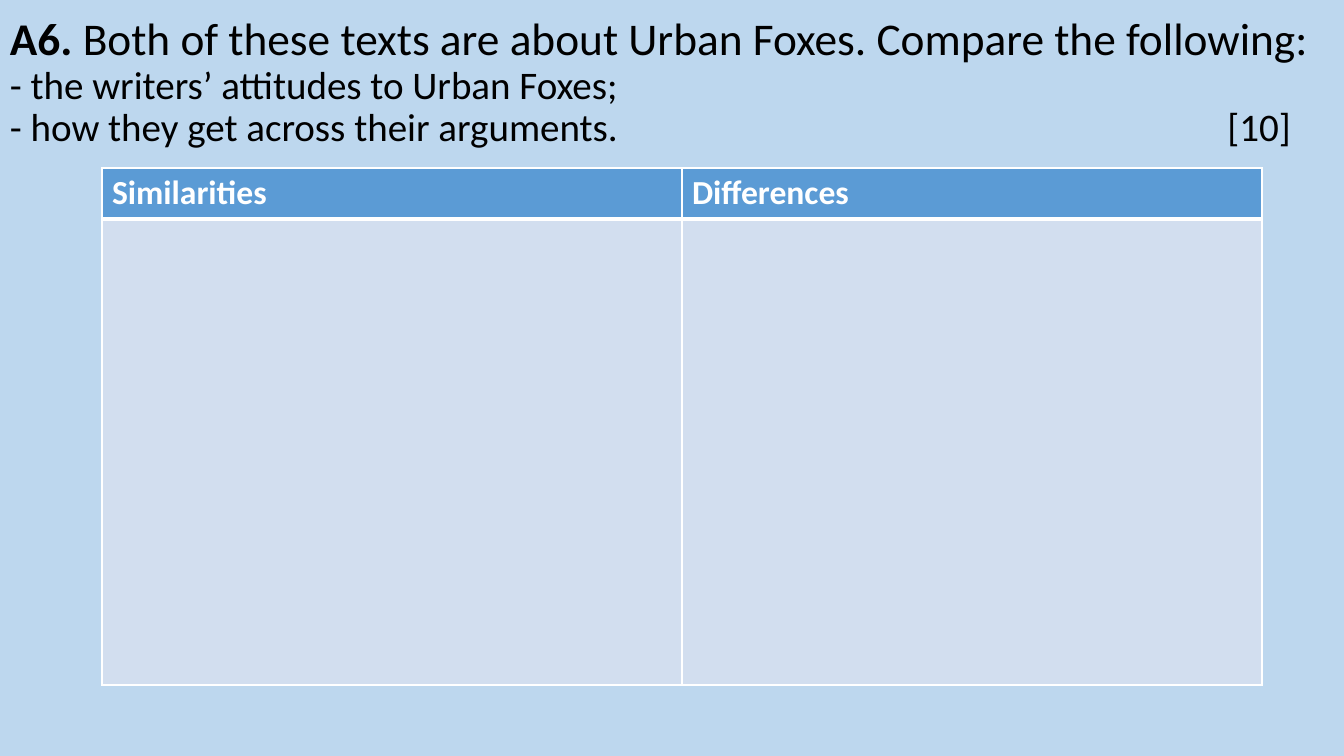
"""Build a slide with an exam question above an empty comparison table."""
from lxml.etree import SubElement
from pptx import Presentation
from pptx.dml.color import RGBColor as RGB
from pptx.enum.text import MSO_ANCHOR as Anchor
from pptx.oxml.ns import qn
from pptx.util import Emu, Pt

SKY = RGB(0xBD, 0xD7, 0xEE)
BLUE = RGB(0x5B, 0x9B, 0xD5)
PALE = RGB(0xD2, 0xDE, 0xEF)
WHITE = RGB(0xFF, 0xFF, 0xFF)
BLACK = RGB(0x00, 0x00, 0x00)
FONT = "Calibri"
SLIDE_W, SLIDE_H = 1344, 756
MARKS_TAB = 1281

QUESTION = [
    (32.4, [("A6. ", True),
            ("Both of these texts are about Urban Foxes. Compare the following:", False)]),
    (27.9, [("- the writers’ attitudes to Urban Foxes;", False)]),
    (27.9, [("- how they get across their arguments.\t[10]", False)]),
]
HEADINGS = ["Similarities", "Differences"]


def px(length):
    return Emu(round(length * 914400 / 100.8))


def style(paragraph, size, color):
    font = paragraph.font
    font.name, font.size = FONT, Pt(size)
    font.color.rgb = color


def add_right_tab(paragraph, position):
    properties = paragraph.font._element.getparent()
    tabs = properties.makeelement(qn("a:tabLst"))
    properties.insert(properties.index(paragraph.font._element), tabs)
    SubElement(tabs, qn("a:tab"), pos=str(px(position)), algn="r")


def add_question(slide, left, top, width, height):
    frame = slide.shapes.add_textbox(px(left), px(top), px(width), px(height)).text_frame
    frame.word_wrap = True
    frame.vertical_anchor = Anchor.MIDDLE
    for index, (size, parts) in enumerate(QUESTION):
        line = frame.add_paragraph() if index else frame.paragraphs[0]
        line.line_spacing = 0.9
        style(line, size, BLACK)
        for text, bold in parts:
            run = line.add_run()
            run.text, run.font.bold = text, bold
    add_right_tab(line, MARKS_TAB)


def paint_cell(cell, color, top_width, bottom_width):
    properties = cell._tc.get_or_add_tcPr()
    widths = {"lnL": 1, "lnR": 1, "lnT": top_width, "lnB": bottom_width}
    for side, width in widths.items():
        border = SubElement(properties, qn(f"a:{side}"), w=str(Pt(width)))
        SubElement(SubElement(border, qn("a:solidFill")), qn("a:srgbClr"), val=str(WHITE))
    cell.fill.solid()
    cell.fill.fore_color.rgb = color


def add_comparison(slide, left, top, column_width, row_heights):
    table = slide.shapes.add_table(
        len(row_heights), len(HEADINGS), px(left), px(top),
        px(column_width * len(HEADINGS)), px(sum(row_heights))).table
    for row, height in zip(table.rows, row_heights):
        row.height = px(height)
    for column, heading in enumerate(HEADINGS):
        header, answer = table.cell(0, column), table.cell(1, column)
        paint_cell(header, BLUE, 1, 3)
        paint_cell(answer, PALE, 3, 1)
        header.text = heading
        title = header.text_frame.paragraphs[0]
        style(title, 24, WHITE)
        title.font.bold = True


def main():
    deck = Presentation()
    deck.slide_width, deck.slide_height = px(SLIDE_W), px(SLIDE_H)
    slide = deck.slides.add_slide(deck.slide_layouts[6])
    slide.background.fill.solid()
    slide.background.fill.fore_color.rgb = SKY
    add_question(slide, 0, 0, SLIDE_W, 167)
    add_comparison(slide, 102, 168, 580, [51, 466])
    deck.save("out.pptx")


if __name__ == "__main__":
    main()
